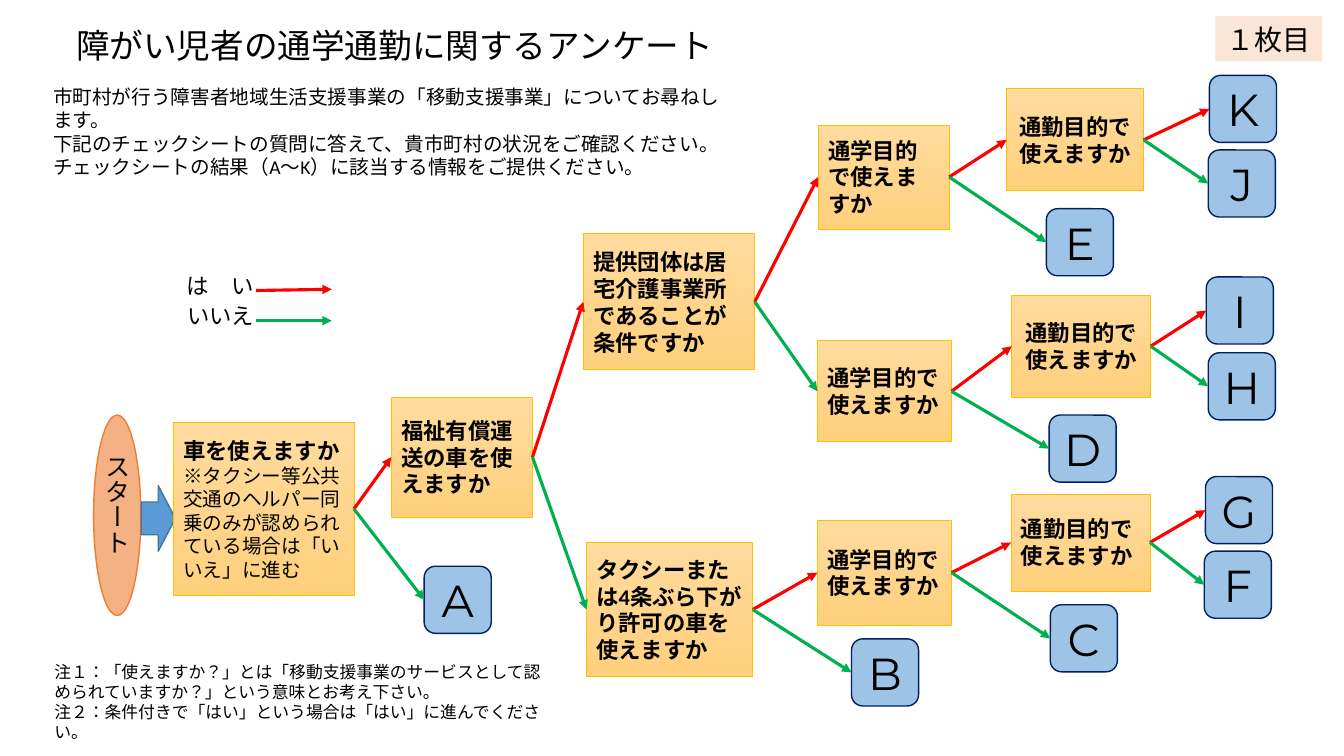
from dataclasses import dataclass

from lxml.etree import SubElement
from pptx import Presentation
from pptx.dml.color import RGBColor
from pptx.enum.lang import MSO_LANGUAGE_ID
from pptx.enum.shapes import MSO_CONNECTOR, MSO_SHAPE
from pptx.enum.text import MSO_ANCHOR, MSO_AUTO_SIZE, PP_ALIGN
from pptx.oxml.ns import qn
from pptx.shapes.autoshape import Shape
from pptx.shapes.connector import Connector
from pptx.slide import Slide
from pptx.util import Cm, Pt

COLORS = {
    "text": "000000",
    "question_top": "FFDB9E",
    "question_bottom": "FFD07C",
    "question_line": "FFC000",
    "answer": "9DC3E6",
    "answer_line": "002060",
    "start": "F4B183",
    "start_line": "ED7D31",
    "start_arrow": "5B9BD5",
    "start_arrow_line": "43739E",
    "badge": "FBE5D6",
    "yes": "FF0000",
    "no": "00B050",
}
ANSWER_SIZE = 1.69
LEFT_SITE, RIGHT_SITE = 1, 3


@dataclass(frozen=True)
class Box:
    """Position and size in centimetres."""
    left: float
    top: float
    width: float
    height: float

    def lengths(self) -> tuple[Cm, Cm, Cm, Cm]:
        return Cm(self.left), Cm(self.top), Cm(self.width), Cm(self.height)


@dataclass(frozen=True)
class Line:
    text: str
    size: int
    bold: bool = False
    font: str = "Calibri"


@dataclass(frozen=True)
class Question:
    """A question box and the names of the boxes its answers lead to."""
    name: str
    box: Box
    text: str
    yes: str
    no: str
    note: str = ""
    alignment: PP_ALIGN = PP_ALIGN.LEFT


@dataclass(frozen=True)
class Answer:
    letter: str
    left: float
    top: float


@dataclass(frozen=True)
class TextBlock:
    box: Box
    size: int
    paragraphs: tuple[str, ...]


SCHOOL = "通学目的で使えますか"
WORK = "通勤目的で使えますか"
QUESTIONS = [
    Question("car", Box(4.37, 10.64, 4.55, 4.37), "車を使えますか", "welfare", "A",
             note="※タクシー等公共交通のヘルパー同乗のみが認められている場合は「いいえ」に進む"),
    Question("welfare", Box(9.86, 10.01, 3.56, 3.02), "福祉有償運送の車を使えますか",
             "provider", "taxi"),
    Question("provider", Box(14.7, 5.89, 4.32, 3.43),
             "提供団体は居宅介護事業所であることが条件ですか", "school_1", "school_2"),
    Question("taxi", Box(14.78, 13.67, 4.19, 3.38),
             "タクシーまたは4条ぶら下がり許可の車を使えますか", "school_3", "B"),
    Question("school_1", Box(20.62, 3.15, 3.3, 2.62), SCHOOL, "work_1", "E"),
    Question("school_2", Box(20.6, 8.59, 3.38, 2.54), SCHOOL, "work_2", "D"),
    Question("school_3", Box(20.6, 13.11, 3.38, 2.64), SCHOOL, "work_3", "C"),
    Question("work_1", Box(25.37, 2.24, 3.45, 2.57), WORK, "K", "J",
             alignment=PP_ALIGN.CENTER),
    Question("work_2", Box(25.5, 7.44, 3.5, 2.57), WORK, "I", "H",
             alignment=PP_ALIGN.CENTER),
    Question("work_3", Box(25.48, 12.45, 3.5, 2.44), WORK, "G", "F"),
]
ANSWERS = [
    Answer("A", 10.69, 14.27), Answer("B", 21.46, 16.1), Answer("C", 26.47, 15.24),
    Answer("D", 26.44, 10.46), Answer("E", 26.37, 5.26), Answer("F", 30.35, 13.89),
    Answer("G", 30.38, 12.01), Answer("H", 30.45, 8.89), Answer("I", 30.4, 6.98),
    Answer("J", 30.45, 3.78), Answer("K", 30.48, 1.9),
]
TEXT_BLOCKS = [
    TextBlock(Box(1.09, 2.01, 17.7, 2.06), 14, (
        "市町村が行う障害者地域生活支援事業の「移動支援事業」についてお尋ねします。",
        "下記のチェックシートの質問に答えて、貴市町村の状況をご確認ください。",
        "チェックシートの結果（A～K）に該当する情報をご提供ください。")),
    TextBlock(Box(4.45, 6.73, 2.34, 0.94), 16, ("は　い",)),
    TextBlock(Box(4.47, 7.49, 2.34, 0.94), 16, ("いいえ",)),
    TextBlock(Box(1.12, 16.54, 13.08, 1.8), 12, (
        "注１：「使えますか？」とは「移動支援事業のサービスとして認められていますか？」という意味とお考え下さい。",
        "注２：条件付きで「はい」という場合は「はい」に進んでください。")),
]


def color(name: str) -> RGBColor:
    return RGBColor.from_string(COLORS[name])


def write_lines(shape: Shape, lines: list[Line], alignment: PP_ALIGN = PP_ALIGN.LEFT) -> None:
    frame = shape.text_frame
    frame.word_wrap = True
    for index, line in enumerate(lines):
        paragraph = frame.add_paragraph() if index else frame.paragraphs[0]
        paragraph.alignment = alignment
        run = paragraph.add_run()
        run.text = line.text
        run.font.name = line.font
        run.font.size = Pt(line.size)
        run.font.bold = line.bold
        run.font.color.rgb = color("text")
        run.font.language_id = MSO_LANGUAGE_ID.JAPANESE


def add_filled_shape(slide: Slide, kind: MSO_SHAPE, box: Box, fill: str,
                     outline: str = "") -> Shape:
    shape = slide.shapes.add_shape(kind, *box.lengths())
    shape.shadow.inherit = False
    shape.fill.solid()
    shape.fill.fore_color.rgb = color(fill)
    if outline:
        shape.line.color.rgb = color(outline)
        shape.line.width = Pt(1)
    else:
        shape.line.fill.background()
    return shape


def add_question(slide: Slide, question: Question) -> Shape:
    shape = add_filled_shape(slide, MSO_SHAPE.FLOWCHART_PROCESS, question.box,
                             "question_top", "question_line")
    shape.line.width = Pt(0.5)
    shape.fill.gradient()
    shape.fill.gradient_angle = 270
    for stop, name in zip(shape.fill.gradient_stops, ("question_top", "question_bottom")):
        stop.color.rgb = color(name)
    lines = [Line(question.text, 16, bold=True)]
    if question.note:
        lines.append(Line(question.note, 14))
    write_lines(shape, lines, question.alignment)
    return shape


def add_answer(slide: Slide, answer: Answer) -> Shape:
    box = Box(answer.left, answer.top, ANSWER_SIZE, ANSWER_SIZE)
    shape = add_filled_shape(slide, MSO_SHAPE.ROUNDED_RECTANGLE, box, "answer", "answer_line")
    write_lines(shape, [Line(answer.letter, 32, font="Montserrat")], PP_ALIGN.CENTER)
    return shape


def add_arrow(slide: Slide, color_name: str, start: tuple[float, float] = (0, 0),
              end: tuple[float, float] = (0, 0)) -> Connector:
    arrow = slide.shapes.add_connector(MSO_CONNECTOR.STRAIGHT, *map(Cm, start + end))
    arrow.line.color.rgb = color(color_name)
    arrow.line.width = Pt(2.25)
    SubElement(arrow.line._get_or_add_ln(), qn("a:tailEnd"), type="triangle")
    SubElement(arrow._element.spPr, qn("a:effectLst"))
    return arrow


def add_title(slide: Slide) -> None:
    title = slide.shapes.title
    title.left, title.top, title.width, title.height = Box(0.84, 0.41, 18.21, 1.37).lengths()
    title.text_frame.auto_size = MSO_AUTO_SIZE.NONE
    title.text_frame.vertical_anchor = MSO_ANCHOR.BOTTOM
    write_lines(title, [Line("障がい児者の通学通勤に関するアンケート", 24)], PP_ALIGN.CENTER)
    title.text_frame.paragraphs[0].line_spacing = 0.9


def add_start(slide: Slide) -> None:
    start = add_filled_shape(slide, MSO_SHAPE.OVAL, Box(2.36, 10.46, 1.19, 5.05),
                             "start", "start_line")
    write_lines(start, [Line("スタート", 18)], PP_ALIGN.CENTER)
    start._element.txBody.bodyPr.set("vert", "eaVert")
    add_filled_shape(slide, MSO_SHAPE.RIGHT_ARROW, Box(3.56, 12.24, 0.86, 1.65),
                     "start_arrow", "start_arrow_line")


def main() -> None:
    presentation = Presentation()
    presentation.slide_width, presentation.slide_height = Cm(33.87), Cm(19.05)
    slide = presentation.slides.add_slide(presentation.slide_layouts[5])
    add_title(slide)
    for block in TEXT_BLOCKS:
        text_box = slide.shapes.add_textbox(*block.box.lengths())
        write_lines(text_box, [Line(text, block.size) for text in block.paragraphs])
    badge = add_filled_shape(slide, MSO_SHAPE.RECTANGLE, Box(30.63, 0.41, 2.69, 1.14), "badge")
    write_lines(badge, [Line("１枚目", 20)], PP_ALIGN.CENTER)
    add_start(slide)
    add_arrow(slide, "yes", (6.45, 7.32), (8.36, 7.29))
    add_arrow(slide, "no", (6.45, 8.08), (8.36, 8.08))

    boxes = {question.name: add_question(slide, question) for question in QUESTIONS}
    boxes |= {answer.letter: add_answer(slide, answer) for answer in ANSWERS}
    for question in QUESTIONS:
        for reply, target in (("yes", question.yes), ("no", question.no)):
            arrow = add_arrow(slide, reply)
            arrow.begin_connect(boxes[question.name], RIGHT_SITE)
            arrow.end_connect(boxes[target], LEFT_SITE)
    presentation.save("out.pptx")


if __name__ == "__main__":
    main()
